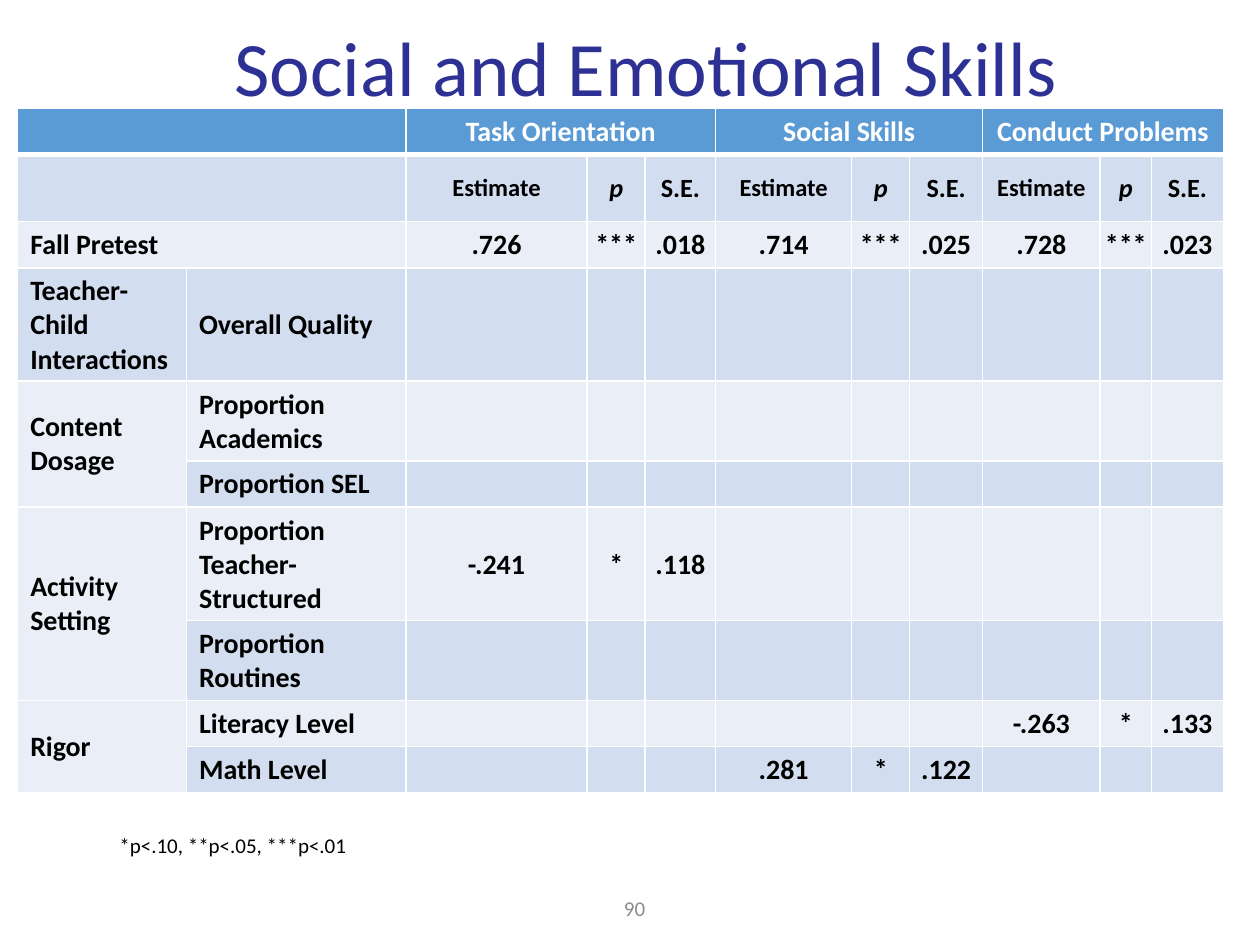
"""Build the slide with the table of social and emotional skill estimates."""
from lxml.etree import SubElement
from pptx import Presentation
from pptx.dml.color import RGBColor as Rgb
from pptx.enum.text import MSO_ANCHOR as Anchor, PP_ALIGN as Align
from pptx.oxml.ns import qn
from pptx.util import Pt

TITLE = "Social and Emotional Skills"
NOTE = "*p<.10, **p<.05, ***p<.01"
PAGE_NUMBER = "90"
OUTCOMES = ["Task Orientation", "Social Skills", "Conduct Problems"]
MEASURES = ["Estimate", "p", "S.E."]
PREDICTORS = [
    ("Fall Pretest", None, {0: (".726", "***", ".018"),
                            1: (".714", "***", ".025"),
                            2: (".728", "***", ".023")}),
    ("Teacher-Child Interactions", "Overall Quality", {}),
    ("Content Dosage", "Proportion Academics", {}),
    ("", "Proportion SEL", {}),
    ("Activity Setting", "Proportion Teacher-Structured", {0: ("-.241", "*", ".118")}),
    ("", "Proportion Routines", {}),
    ("Rigor", "Literacy Level", {2: ("-.263", "*", ".133")}),
    ("", "Math Level", {1: (".281", "*", ".122")}),
]
COLUMN_WIDTHS = [96.5, 125.3, 103.7, 33.1, 40.3, 77.8, 33.1, 41.8, 67, 29.5, 41]
ROW_HEIGHTS = [24.5, 38.2, 20.9, 23.8, 23, 23, 31.7, 23, 23, 23]
TABLE_BOX = (10.1, 62, sum(COLUMN_WIDTHS), 391)
THEME = {
    "font": "Calibri", "title": "2D3193", "number": "8C8C8C", "text": "000000",
    "head": "5B9BD5", "bands": ["EAEFF7", "D2DEEF"], "white": "FFFFFF",
    "title_size": 44, "small_size": 12, "body_size": 16,
    "measure_sizes": [14, 15, 15],
}
LABEL_MARGINS = {"margin_left": 7.2, "margin_right": 7.2, "margin_top": 3.6, "margin_bottom": 3.6}
VALUE_MARGINS = {"margin_left": 0.7, "margin_right": 0.7, "margin_top": 0.7, "margin_bottom": 0}


def apply(target, values):
    for name, value in values.items():
        setattr(target, name, value)


def write(frame, text, size, color, align=Align.LEFT, **style):
    para = frame.paragraphs[0]
    para.alignment = align
    span = para.add_run()
    span.text = text
    apply(span.font, {"name": THEME["font"], "size": Pt(size), **style})
    span.font.color.rgb = Rgb.from_string(color)
    return para


def place(shape, box):
    apply(shape, dict(zip(("left", "top", "width", "height"), map(Pt, box))))


def add_text(page, box, text, color, align, anchor):
    shape = page.shapes.add_textbox(*map(Pt, box))
    apply(shape.text_frame, {"word_wrap": True, "vertical_anchor": anchor})
    write(shape.text_frame, text, THEME["small_size"], color, align)


def style_cell(cell, fill, bottom):
    props = cell._tc.get_or_add_tcPr()
    for side, width in {"L": 1, "R": 1, "T": 1, "B": bottom}.items():
        line = SubElement(props, qn(f"a:ln{side}"), w=str(Pt(width)))
        paint = SubElement(line, qn("a:solidFill"))
        SubElement(paint, qn("a:srgbClr"), val=THEME["white"])
    cell.fill.solid()
    cell.fill.fore_color.rgb = Rgb.from_string(fill)
    cell.vertical_anchor = Anchor.MIDDLE


def fill_cell(cell, text, margins, color=THEME["text"], size=THEME["body_size"],
              align=Align.CENTER, italic=False):
    apply(cell, {name: Pt(value) for name, value in margins.items()})
    if text:
        write(cell.text_frame, text, size, color, align, bold=True, italic=italic)


def add_headings(table):
    for index, outcome in enumerate(OUTCOMES):
        first = 2 + index * len(MEASURES)
        table.cell(0, first).merge(table.cell(0, first + len(MEASURES) - 1))
        fill_cell(table.cell(0, first), outcome, LABEL_MARGINS, THEME["white"])
        for offset, (measure, size) in enumerate(zip(MEASURES, THEME["measure_sizes"])):
            fill_cell(table.cell(1, first + offset), measure, LABEL_MARGINS,
                      size=size, italic=measure == "p")
    for row in range(2):
        table.cell(row, 0).merge(table.cell(row, 1))


def add_predictors(table):
    for row, (group, label, results) in enumerate(PREDICTORS, start=2):
        for column, text in enumerate((group, label)):
            fill_cell(table.cell(row, column), text, LABEL_MARGINS, align=Align.LEFT)
        if label is None:
            table.cell(row, 0).merge(table.cell(row, 1))
        if not group:
            table.cell(row - 1, 0).merge(table.cell(row, 0))
        for outcome, values in results.items():
            for offset, value in enumerate(values):
                column = 2 + outcome * len(MEASURES) + offset
                fill_cell(table.cell(row, column), value, VALUE_MARGINS)


def add_results(page):
    frame = page.shapes.add_table(len(ROW_HEIGHTS), len(COLUMN_WIDTHS), *map(Pt, TABLE_BOX))
    table = frame.table
    for column, width in zip(table.columns, COLUMN_WIDTHS):
        column.width = Pt(width)
    for index, (row, height) in enumerate(zip(table.rows, ROW_HEIGHTS)):
        row.height = Pt(height)
        fill = THEME["bands"][index % 2] if index else THEME["head"]
        for cell in row.cells:
            style_cell(cell, fill, 1 if index else 3)
    add_headings(table)
    add_predictors(table)
    for cell in table.iter_cells():
        if not cell.text:
            para = cell.text_frame.paragraphs[0]._p
            SubElement(para, qn("a:endParaRPr"), sz=str(THEME["body_size"] * 100))
    place(frame, TABLE_BOX)


def main():
    deck = Presentation()
    apply(deck, {"slide_width": Pt(720), "slide_height": Pt(540)})
    page = deck.slides.add_slide(deck.slide_layouts[5])
    title = page.shapes.title
    place(title, (59, -11.5, 620.6, 104.4))
    title.text_frame.vertical_anchor = Anchor.MIDDLE
    para = write(title.text_frame, TITLE, THEME["title_size"], THEME["title"], Align.CENTER)
    para.line_spacing = 0.9
    add_text(page, (213.8, 504.7, 162, 28.8), PAGE_NUMBER, THEME["number"],
             Align.RIGHT, Anchor.MIDDLE)
    add_text(page, (61.2, 472.3, 257, 21.6), NOTE, THEME["text"], Align.LEFT, Anchor.TOP)
    add_results(page)
    deck.save("out.pptx")


if __name__ == "__main__":
    main()
